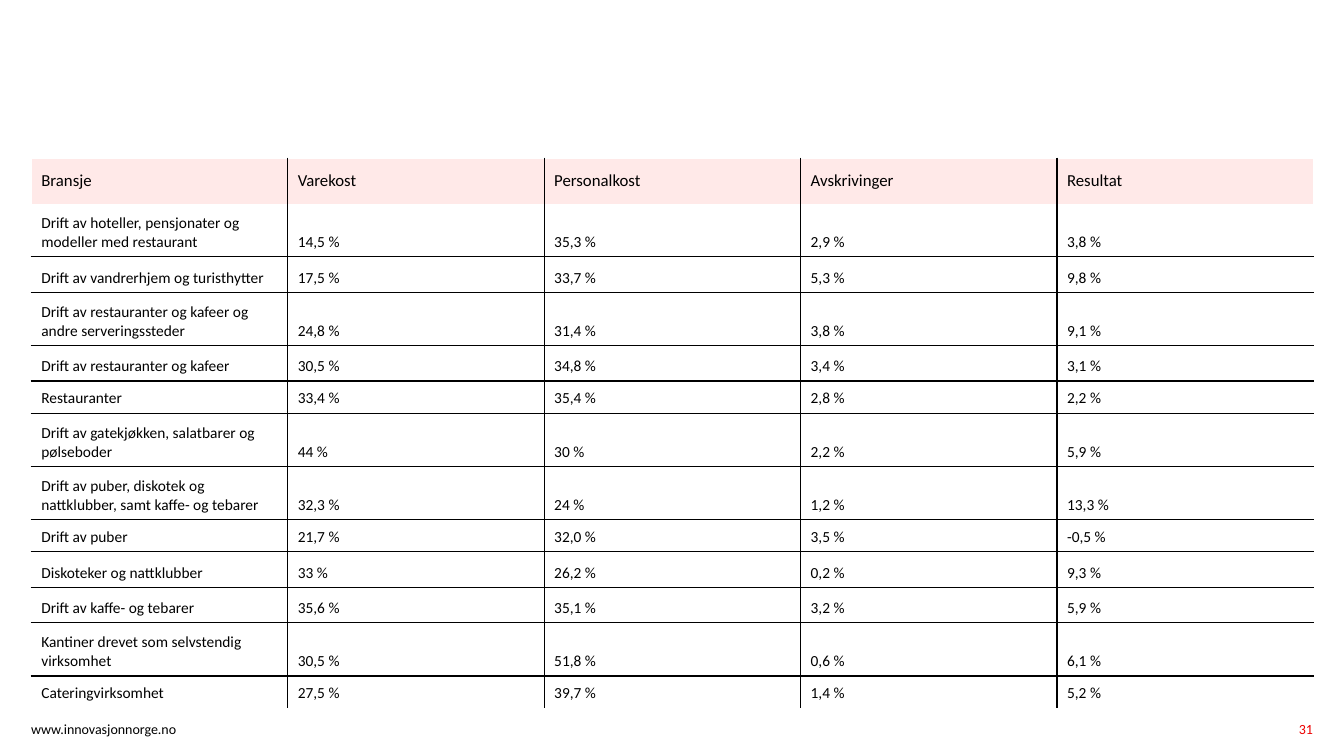
from dataclasses import dataclass

from lxml import etree
from pptx import Presentation, util as u
from pptx.dml import color
from pptx.enum import text
from pptx.oxml import ns

FONT = "Calibri"
BLACK, WHITE, RED, PINK = "000000", "FFFFFF", "ED0000", "FFE9E8"
LEFT, TABLE_TOP, COLUMN_WIDTH = 22.3, 113, 183.2
HEADER, TALL, MEDIUM, SHORT = 32.4, 38, 25.4, 23


@dataclass
class Row:
    height: float
    cells: tuple[str, ...]


@dataclass
class Footer:
    left: float
    width: float
    label: str
    colour: str
    align: text.PP_ALIGN


ROWS = [
    Row(HEADER, ("Bransje", "Varekost", "Personalkost", "Avskrivinger", "Resultat")),
    Row(TALL, ("Drift av hoteller, pensjonater og modeller med restaurant",
               "14,5 %", "35,3 %", "2,9 %", "3,8 %")),
    Row(MEDIUM, ("Drift av vandrerhjem og turisthytter", "17,5 %", "33,7 %", "5,3 %", "9,8 %")),
    Row(TALL, ("Drift av restauranter og kafeer og andre serveringssteder",
               "24,8 %", "31,4 %", "3,8 %", "9,1 %")),
    Row(MEDIUM, ("Drift av restauranter og kafeer", "30,5 %", "34,8 %", "3,4 %", "3,1 %")),
    Row(SHORT, ("Restauranter", "33,4 %", "35,4 %", "2,8 %", "2,2 %")),
    Row(TALL, ("Drift av gatekjøkken, salatbarer og pølseboder",
               "44 %", "30 %", "2,2 %", "5,9 %")),
    Row(TALL, ("Drift av puber, diskotek og nattklubber, samt kaffe- og tebarer",
               "32,3 %", "24 %", "1,2 %", "13,3 %")),
    Row(SHORT, ("Drift av puber", "21,7 %", "32,0 %", "3,5 %", "-0,5 %")),
    Row(MEDIUM, ("Diskoteker og nattklubber", "33 %", "26,2 %", "0,2 %", "9,3 %")),
    Row(MEDIUM, ("Drift av kaffe- og tebarer", "35,6 %", "35,1 %", "3,2 %", "5,9 %")),
    Row(TALL, ("Kantiner drevet som selvstendig virksomhet",
               "30,5 %", "51,8 %", "0,6 %", "6,1 %")),
    Row(SHORT, ("Cateringvirksomhet", "27,5 %", "39,7 %", "1,4 %", "5,2 %")),
]
FOOTERS = [
    Footer(LEFT, 205, "www.innovasjonnorge.no", BLACK, text.PP_ALIGN.LEFT),
    Footer(860, 77.8, "31", RED, text.PP_ALIGN.RIGHT),
]


def rgb(value: str) -> color.RGBColor:
    return color.RGBColor.from_string(value)


def style_text(para, size: float, colour: str) -> None:
    for span in para.runs:
        span.font.name = FONT
        span.font.size = u.Pt(size)
        span.font.color.rgb = rgb(colour)


def set_borders(cell, borders: dict[str, str | None]) -> None:
    """Borders come in the order left, right, top, bottom; None means no line."""
    properties = cell._tc.get_or_add_tcPr()
    for position, (side, colour) in enumerate(borders.items()):
        line = etree.Element(ns.qn(f"a:ln{side}"), w=str(u.Pt(1)))
        properties.insert(position, line)
        if colour is None:
            etree.SubElement(line, ns.qn("a:noFill"))
        else:
            fill = etree.SubElement(line, ns.qn("a:solidFill"))
            etree.SubElement(fill, ns.qn("a:srgbClr"), val=colour)


def draw_table(page, rows: list[Row]) -> None:
    last_row, last_column = len(rows) - 1, len(rows[0].cells) - 1
    frame = page.shapes.add_table(
        len(rows), last_column + 1, u.Pt(LEFT), u.Pt(TABLE_TOP),
        u.Pt(COLUMN_WIDTH * (last_column + 1)), u.Pt(sum(row.height for row in rows)))
    table = frame.table
    table.horz_banding = False
    # Plain table style without grid
    style = table._tbl.tblPr.find(ns.qn("a:tableStyleId"))
    style.text = "{2D5ABB26-0587-4C30-8999-92F81FD0307C}"
    for column in table.columns:
        column.width = u.Pt(COLUMN_WIDTH)

    for r, row in enumerate(rows):
        table.rows[r].height = u.Pt(row.height)
        is_header = r == 0
        for c, label in enumerate(row.cells):
            cell = table.cell(r, c)
            cell.text_frame.text = label
            style_text(cell.text_frame.paragraphs[0], 12 if is_header else 11, BLACK)
            if is_header:
                cell.vertical_anchor = text.MSO_ANCHOR.MIDDLE
                cell.fill.solid()
                cell.fill.fore_color.rgb = rgb(PINK)
            else:
                cell.vertical_anchor = text.MSO_ANCHOR.BOTTOM
                cell.fill.background()
            set_borders(cell, {
                "L": WHITE if c == 0 else BLACK,
                "R": WHITE if c == last_column else BLACK,
                "T": WHITE if is_header else None if r == 1 else BLACK,
                "B": None if r in (0, last_row) else BLACK,
            })


def draw_footer(page, footer: Footer) -> None:
    box = page.shapes.add_textbox(u.Pt(footer.left), u.Pt(514.8), u.Pt(footer.width), u.Pt(14))
    frame = box.text_frame
    frame.word_wrap = True
    frame.margin_left = frame.margin_right = frame.margin_top = frame.margin_bottom = 0
    frame.text = footer.label
    para = frame.paragraphs[0]
    para.alignment = footer.align
    style_text(para, 10, footer.colour)


def main() -> None:
    deck = Presentation()
    deck.slide_width, deck.slide_height = u.Pt(960), u.Pt(540)
    page = deck.slides.add_slide(deck.slide_layouts[6])

    # Cost shares by industry
    draw_table(page, ROWS)

    # Web address and page number
    for footer in FOOTERS:
        draw_footer(page, footer)

    deck.save("out.pptx")


if __name__ == "__main__":
    main()
